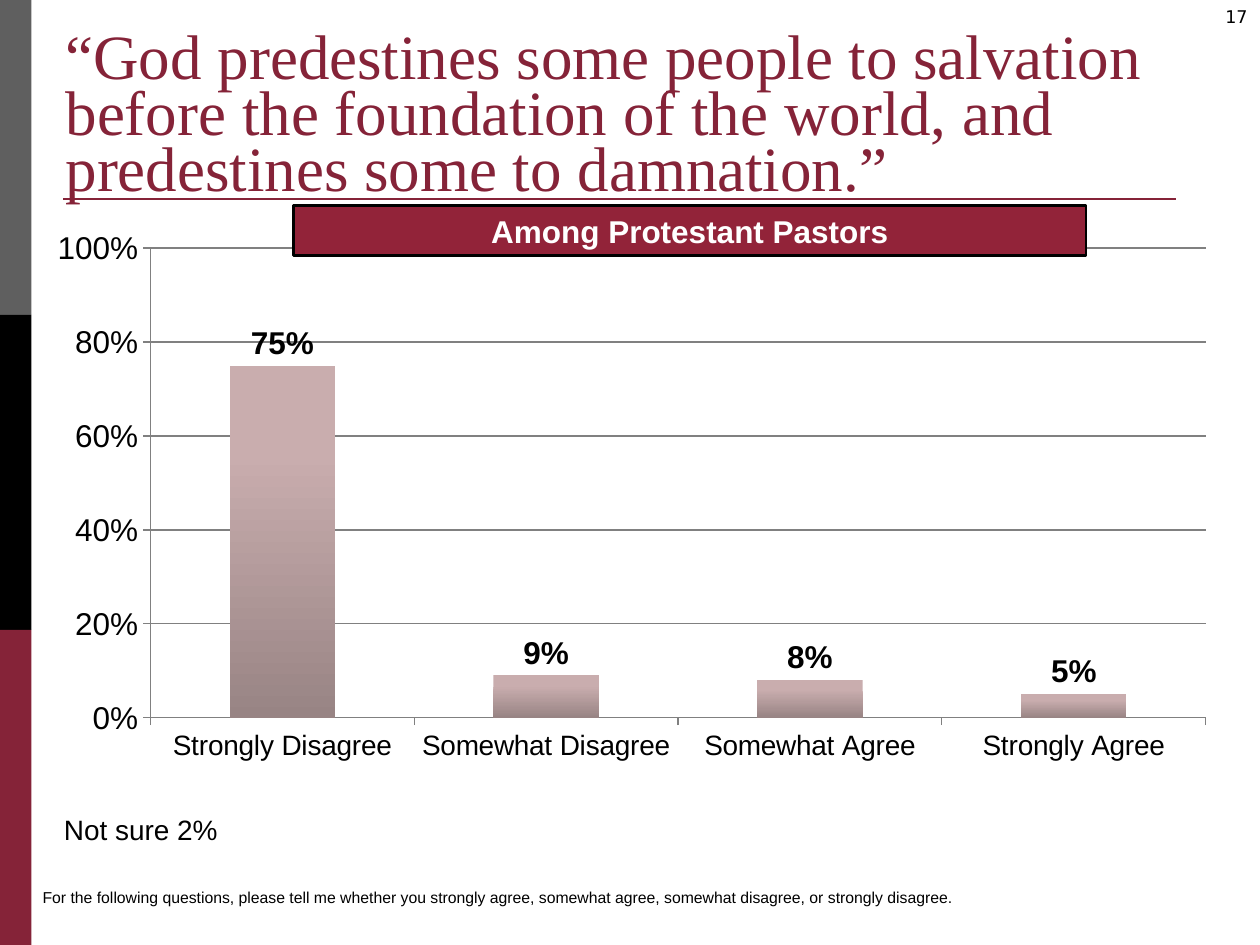
from lxml.etree import SubElement
from pptx import Presentation
from pptx.chart.data import CategoryChartData
from pptx.dml.color import RGBColor
from pptx.enum.chart import XL_CHART_TYPE, XL_LABEL_POSITION, XL_TICK_MARK
from pptx.enum.shapes import MSO_CONNECTOR, MSO_SHAPE
from pptx.enum.text import MSO_ANCHOR, PP_ALIGN
from pptx.oxml.ns import qn
from pptx.util import Inches, Pt

CRIMSON = "852338"
BLACK = "000000"
GRAY = "808080"


def color(value):
    """Turn a hex string into a colour."""
    return RGBColor.from_string(value)


def style_font(font, size, name="Arial", fill=BLACK, bold=False):
    """Set the face, size, colour and weight of a font."""
    font.name, font.size, font.bold = name, Pt(size), bold
    font.color.rgb = color(fill)


def write(shape, text, size, align=PP_ALIGN.LEFT, **style):
    """Write one wrapped, styled paragraph into a shape."""
    shape.text_frame.word_wrap = True
    para = shape.text_frame.paragraphs[0]
    para.alignment = align
    run = para.add_run()
    run.text = text
    style_font(run.font, size, **style)
    return para


def add_text(page, box, text, size, **style):
    """Add a text box."""
    return write(page.shapes.add_textbox(*map(Inches, box)), text, size, **style)


def add_rectangle(page, box, fill, outline=None):
    """Add a flat rectangle with an optional outline."""
    shape = page.shapes.add_shape(MSO_SHAPE.RECTANGLE, *map(Inches, box))
    shape.shadow.inherit = False
    shape.fill.solid()
    shape.fill.fore_color.rgb = color(fill)
    if outline:
        shape.line.color.rgb = color(outline)
        shape.line.width = Pt(1.5)
    else:
        shape.line.fill.background()
    return shape


def add_side_band(page, box, fills):
    """Stack equal colour blocks down the side."""
    left, top, width, height = box
    step = height / len(fills)
    for index, fill in enumerate(fills):
        add_rectangle(page, (left, top + index * step, width, step), fill)


def add_title(page, box, text):
    """Place the title placeholder and the rule beneath it."""
    title = page.shapes.title
    title.left, title.top, title.width, title.height = map(Inches, box)
    title.text_frame.vertical_anchor = MSO_ANCHOR.BOTTOM
    para = write(title, text, 36, name="Times New Roman", fill=CRIMSON)
    para.line_spacing = Pt(32)
    rule = page.shapes.add_connector(
        MSO_CONNECTOR.STRAIGHT, Inches(0.5), Inches(1.58), Inches(9.33), Inches(1.58))
    rule.line.color.rgb = color(CRIMSON)
    rule.line.width = Pt(1.5)
    SubElement(rule._element.spPr, qn("a:effectLst"))


def set_plot_layout(chart, x, y, w, h):
    """Fix the inner plot area as fractions of the chart."""
    plot_area = chart._chartSpace.chart.plotArea
    for old in plot_area.findall(qn("c:layout")):
        plot_area.remove(old)
    layout = plot_area.makeelement(qn("c:layout"))
    plot_area.insert(0, layout)
    manual = SubElement(layout, qn("c:manualLayout"))
    settings = dict(layoutTarget="inner", xMode="edge", yMode="edge", x=x, y=y, w=w, h=h)
    for tag, value in settings.items():
        SubElement(manual, qn(f"c:{tag}")).set("val", str(value))


def style_axis(axis, size):
    """Format the line, ticks and labels of an axis."""
    axis.major_tick_mark = XL_TICK_MARK.OUTSIDE
    axis.minor_tick_mark = XL_TICK_MARK.NONE
    axis.format.line.color.rgb = color(GRAY)
    style_font(axis.tick_labels.font, size)


def add_response_chart(page, box, responses):
    """Add the column chart of survey responses."""
    data = CategoryChartData(number_format="0%")
    data.categories = list(responses)
    data.add_series("Series 1", list(responses.values()))
    chart = page.shapes.add_chart(
        XL_CHART_TYPE.COLUMN_CLUSTERED, *map(Inches, box), data).chart
    chart.has_legend = chart.has_title = False
    style_font(chart.font, 18)
    set_plot_layout(chart, 0.095, 0.054, 0.889, 0.807)

    style_axis(chart.category_axis, 16)
    axis = chart.value_axis
    style_axis(axis, 18)
    axis.minimum_scale, axis.maximum_scale, axis.major_unit = 0, 1, 0.2
    axis.tick_labels.number_format = "0%"
    axis.tick_labels.number_format_is_linked = False
    axis.major_gridlines.format.line.color.rgb = color(GRAY)

    plot = chart.plots[0]
    plot.gap_width, plot.vary_by_categories = 150, False
    series = plot.series[0]
    fill = series.format.fill
    fill.gradient()
    fill.gradient_angle = 270
    stops = ((0.25, "C9ADAE"), (1, "988484"))
    for stop, (position, value) in zip(fill.gradient_stops, stops):
        stop.position, stop.color.rgb = position, color(value)
    labels = series.data_labels
    labels.show_value = True
    labels.number_format, labels.number_format_is_linked = "0%", False
    labels.position = XL_LABEL_POSITION.OUTSIDE_END
    style_font(labels.font, 18, bold=True)


def add_banner(page, box, text):
    """Add the outlined banner that names the group surveyed."""
    banner = add_rectangle(page, box, "922339", BLACK)
    banner.text_frame.vertical_anchor = MSO_ANCHOR.MIDDLE
    write(banner, text, 18, align=PP_ALIGN.CENTER, fill="FFFFFF", bold=True)


def main():
    """Build and save the survey slide."""
    deck = Presentation()
    deck.slide_width, deck.slide_height = Inches(10), Inches(7.5)
    page = deck.slides.add_slide(deck.slide_layouts[5])
    add_side_band(page, (0, 0, 0.25, 7.5), ("5F5F5F", BLACK, CRIMSON))
    add_text(page, (9.5, 0, 0.5, 0.33), "17", 10,
             align=PP_ALIGN.RIGHT, name="DejaVu Sans")
    add_title(page, (0.42, 0.18, 9.36, 1.49),
              "“God predestines some people to salvation before the foundation "
              "of the world, and predestines some to damnation.”")
    add_text(page, (0.24, 7, 7.66, 0.25),
             "For the following questions, please tell me whether you strongly agree, "
             "somewhat agree, somewhat disagree, or strongly disagree.", 9)
    add_response_chart(page, (0.3, 1.72, 9.42, 4.62), {
        "Strongly Disagree": 0.75,
        "Somewhat Disagree": 0.09,
        "Somewhat Agree": 0.08,
        "Strongly Agree": 0.05,
    })
    add_text(page, (0.41, 6.4, 1.76, 0.37), "Not sure 2%", 16)
    add_banner(page, (2.33, 1.63, 6.29, 0.4), "Among Protestant Pastors")
    deck.save("out.pptx")


if __name__ == "__main__":
    main()
